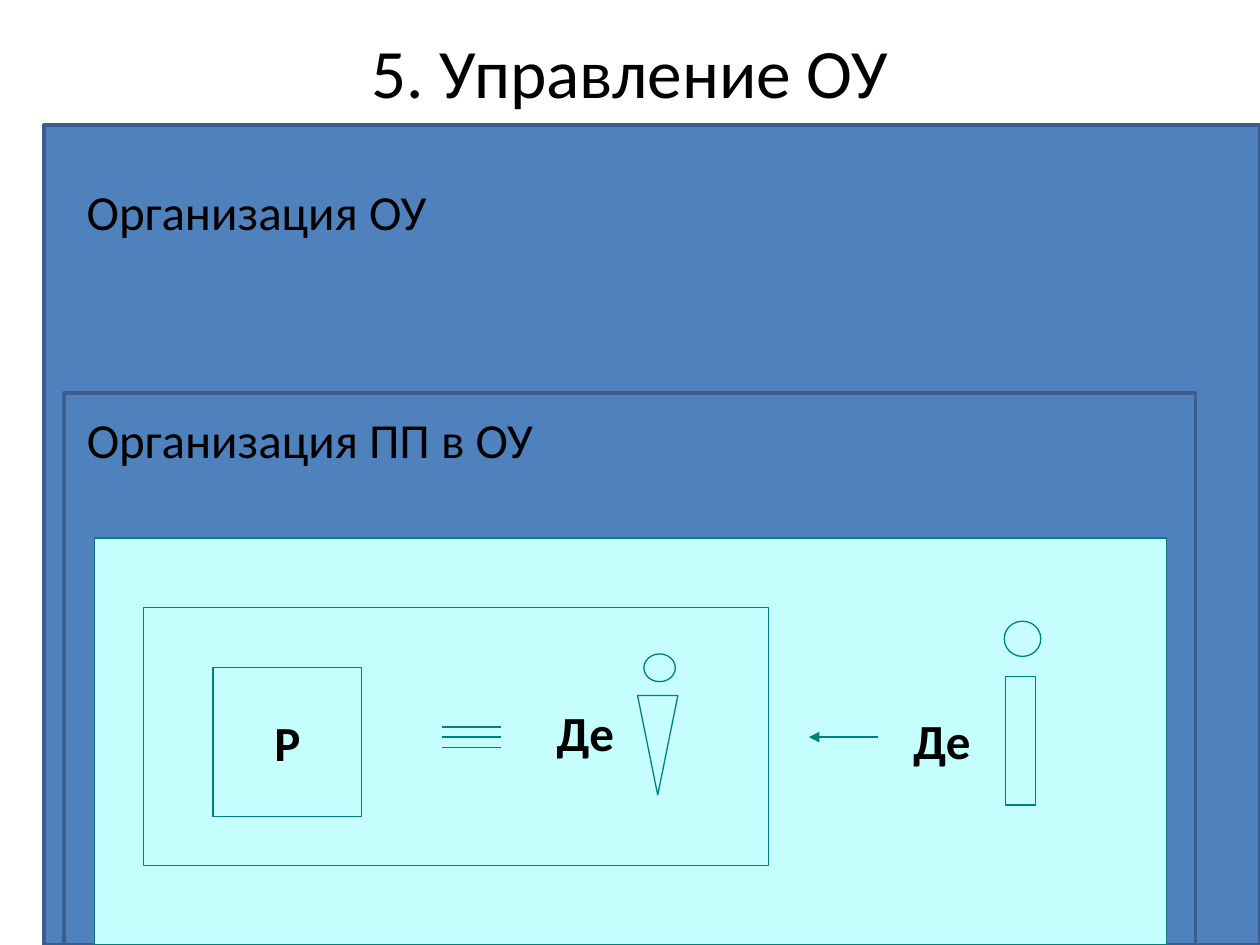
from lxml import etree
from pptx import Presentation
from pptx import util as u
from pptx.dml.color import RGBColor
from pptx.enum import shapes, text
from pptx.oxml.ns import qn

BLUE, EDGE = "4F81BD", "3A5F8C"
AQUA, TEAL = "C6FEFD", "008080"
KIND = shapes.MSO_SHAPE


def tint(code):
    return RGBColor.from_string(code)


def write(shape, words, size=28, bold=False, align="LEFT", anchor="TOP", wrap=True):
    frame = shape.text_frame
    look = {"word_wrap": wrap, "auto_size": text.MSO_AUTO_SIZE.NONE,
            "vertical_anchor": getattr(text.MSO_ANCHOR, anchor)}
    for key, value in look.items():
        setattr(frame, key, value)
    para = frame.paragraphs[0]
    para.alignment = getattr(text.PP_ALIGN, align)
    run = para.add_run()
    run.text = words
    for key, value in {"name": "Calibri", "size": u.Pt(size), "bold": bold}.items():
        setattr(run.font, key, value)
    run.font.color.rgb = tint("000000")


def draw(slide, box, kind=KIND.RECTANGLE, fill=AQUA, line=TEAL, width=0.75):
    shape = slide.shapes.add_shape(kind, *map(u.Inches, box))
    shape.shadow.inherit = False
    shape.fill.solid()
    shape.fill.fore_color.rgb = tint(fill)
    if line:
        shape.line.color.rgb = tint(line)
        shape.line.width = u.Pt(width)
    else:
        shape.line.fill.background()
    return shape


def rule(slide, start, end, y, arrow=False):
    line = slide.shapes.add_connector(
        shapes.MSO_CONNECTOR.STRAIGHT, *map(u.Inches, (start, y, end, y)))
    line.line.color.rgb = tint(TEAL)
    line.line.width = u.Pt(0.75)
    if arrow:
        etree.SubElement(line.line._get_or_add_ln(), qn("a:tailEnd"), type="triangle")
    etree.SubElement(line._element.spPr, qn("a:effectLst"))


def label(slide, box, words):
    area = slide.shapes.add_textbox(*map(u.Inches, box))
    write(area, words)


def mark(slide, x, y):
    """Short bold label beside a figure."""
    write(draw(slide, (x, y, 0.7, 0.57), line=None), "Де", bold=True, wrap=False)


def head(slide, box):
    title = slide.shapes.title
    for key, value in zip(("left", "top", "width", "height"), box):
        setattr(title, key, u.Inches(value))
    write(title, "5. Управление ОУ", 39.6, align="CENTER", anchor="MIDDLE")


def frame(slide, box, words, drop, inset, size):
    """Blue frame with its caption."""
    x, y, _, _ = box
    draw(slide, box, fill=BLUE, line=EDGE, width=2)
    label(slide, (x + inset, y + drop, *size), words)


def pair(slide, box):
    """Inner panel: square, identity sign and child figure."""
    x, y, _, _ = box
    draw(slide, box)
    square = draw(slide, (x + 0.55, y + 0.48, 1.18, 1.18))
    write(square, "Р", bold=True, align="CENTER", anchor="MIDDLE", wrap=False)
    for step in range(3):
        rule(slide, x + 2.37, x + 2.84, y + 0.95 + 0.08 * step)
    mark(slide, x + 3.18, y + 0.71)
    body = draw(slide, (x + 3.92, y + 0.7, 0.32, 0.79), KIND.ISOSCELES_TRIANGLE)
    body.rotation = 180
    draw(slide, (x + 3.97, y + 0.37, 0.25, 0.22), KIND.OVAL)


def scene(slide, box):
    """Aqua panel: the pair and the figure acting on it."""
    x, y, _, _ = box
    draw(slide, box)
    mark(slide, x + 6.4, y + 1.32)
    draw(slide, (x + 7.23, y + 1.1, 0.24, 1.02))
    draw(slide, (x + 7.22, y + 0.66, 0.29, 0.28), KIND.OVAL)
    rule(slide, x + 6.22, x + 5.67, y + 1.58, arrow=True)
    pair(slide, (x + 0.39, y + 0.55, 4.96, 2.05))


def main():
    deck = Presentation()
    deck.slide_width, deck.slide_height = u.Inches(10), u.Inches(7.5)
    slide = deck.slides.add_slide(deck.slide_layouts[5])
    head(slide, (0.75, 0.21, 8.5, 0.71))
    # Nested frames, outermost first
    frame(slide, (0.35, 0.99, 9.65, 6.51), "Организация ОУ", 0.4, 0.24, (6.93, 0.57))
    frame(slide, (0.51, 3.12, 8.98, 4.38), "Организация ПП в ОУ", 0.08, 0.08, (8.82, 3.6))
    scene(slide, (0.75, 4.27, 8.51, 3.23))
    deck.save("out.pptx")


if __name__ == "__main__":
    main()
